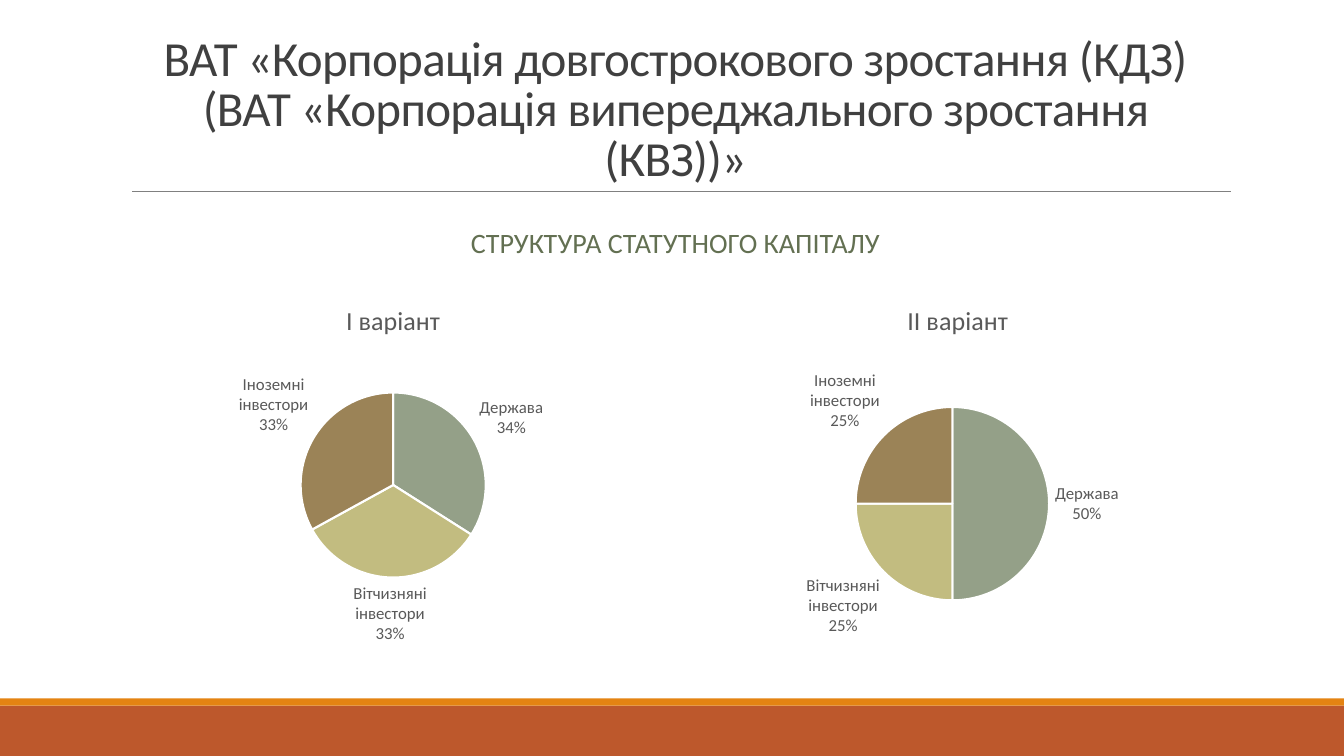
import pptx
import pptx.chart.data
import pptx.dml.color
import pptx.enum.chart
import pptx.enum.shapes
import pptx.enum.text
import pptx.oxml
import pptx.util
from dataclasses import dataclass
from lxml import etree
from pptx.util import Inches

TITLE = ("ВАТ «Корпорація довгострокового зростання (КДЗ)\v"
         "(ВАТ «Корпорація випереджального зростання (КВЗ))»")
SUBTITLE = "СТРУКТУРА СТАТУТНОГО КАПІТАЛУ"
INVESTORS = ["Держава", "Вітчизняні інвестори", "Іноземні інвестори"]
# name, shares in percent, pie place as fractions of the chart (x, y, w, h)
VARIANTS = [
    ("I варіант", (34, 33, 33), (0.33, 0.29, 0.34, 0.5)),
    ("II варіант", (50, 25, 25), (0.31, 0.33, 0.36, 0.52)),
]

MARGIN, CONTENT_WIDTH = 1.2, 11
CHART_TOP, CHART_WIDTH, CHART_HEIGHT = 2.82, 5.4, 3.69
CHART_GAP = CONTENT_WIDTH - 2 * CHART_WIDTH


@dataclass(frozen=True)
class Theme:
    font: str = "Calibri"
    title: str = "404040"
    subtitle: str = "637052"
    chart_text: str = "595959"
    rule: str = "808080"
    paper: str = "FFFFFF"
    bands: tuple = (("BD582C", 7, 0.5), ("E48312", 6.93, 0.07))
    slices: tuple = ("94A088", "C2BC80", "9B8357")
    title_size: float = 35
    subtitle_size: float = 20
    chart_title_size: float = 18.6
    label_size: float = 12


THEME = Theme()


def rgb(color):
    return pptx.dml.color.RGBColor.from_string(color)


def style_font(font, size, color):
    font.name = THEME.font
    font.size = pptx.util.Pt(size)
    font.bold = False
    font.color.rgb = rgb(color)


def write(frame, text, *, size, color, anchor, line_spacing=1.0,
          before=0, after=0, tracking=None):
    """Put one centred paragraph in a frame; tracking is in points."""
    frame.word_wrap = True
    frame.auto_size = pptx.enum.text.MSO_AUTO_SIZE.NONE
    frame.vertical_anchor = anchor
    frame.text = text
    paragraph = frame.paragraphs[0]
    paragraph.alignment = pptx.enum.text.PP_ALIGN.CENTER
    paragraph.line_spacing = line_spacing
    paragraph.space_before = pptx.util.Pt(before)
    paragraph.space_after = pptx.util.Pt(after)
    for run in paragraph.runs:
        style_font(run.font, size, color)
        if tracking is not None:
            run.font._element.set("spc", str(int(tracking * 100)))


def add_band(slide, width, color, top, height):
    band = slide.shapes.add_shape(pptx.enum.shapes.MSO_SHAPE.RECTANGLE,
                                  0, Inches(top), width, Inches(height))
    band.shadow.inherit = False
    band.fill.solid()
    band.fill.fore_color.rgb = rgb(color)
    band.line.fill.background()


def add_rule(slide):
    rule = slide.shapes.add_connector(pptx.enum.shapes.MSO_CONNECTOR.STRAIGHT,
                                      Inches(1.31), Inches(1.9), Inches(12.21), Inches(1.9))
    rule.line.color.rgb = rgb(THEME.rule)
    rule.line.width = pptx.util.Pt(0.5)
    etree.SubElement(rule._element.spPr, pptx.oxml.ns.qn("a:effectLst"))


def place_pie(chart, place):
    """Fix the inner plot area at the given fractions of the chart."""
    plot_area = chart._chartSpace.chart.plotArea
    for old in plot_area.findall(pptx.oxml.ns.qn("c:layout")):
        plot_area.remove(old)
    layout = etree.Element(pptx.oxml.ns.qn("c:layout"))
    manual = etree.SubElement(layout, pptx.oxml.ns.qn("c:manualLayout"))
    settings = [("layoutTarget", "inner"), ("xMode", "edge"), ("yMode", "edge")]
    for tag, value in settings + list(zip("xywh", place)):
        etree.SubElement(manual, pptx.oxml.ns.qn(f"c:{tag}")).set("val", str(value))
    plot_area.insert(0, layout)


def label_slices(plot):
    plot.has_data_labels = True
    labels = plot.data_labels
    style_font(labels.font, THEME.label_size, THEME.chart_text)
    labels.number_format = "0%"
    labels.number_format_is_linked = False
    labels.show_value = False
    labels.show_category_name = True
    labels.show_percentage = True
    labels.position = pptx.enum.chart.XL_LABEL_POSITION.OUTSIDE_END
    element = labels._element
    backing = pptx.oxml.parse_xml(
        f'<c:spPr {pptx.oxml.ns.nsdecls("c", "a")}><a:solidFill>'
        f'<a:srgbClr val="{THEME.paper}"/></a:solidFill></c:spPr>')
    element.find(pptx.oxml.ns.qn("c:txPr")).addprevious(backing)
    separator = etree.Element(pptx.oxml.ns.qn("c:separator"))
    separator.text = "\n"
    element.find(pptx.oxml.ns.qn("c:showBubbleSize")).addnext(separator)


def add_variant(slide, left, name, shares, place):
    data = pptx.chart.data.CategoryChartData()
    data.categories = INVESTORS
    data.add_series(name, shares)
    chart = slide.shapes.add_chart(
        pptx.enum.chart.XL_CHART_TYPE.PIE, Inches(left), Inches(CHART_TOP),
        Inches(CHART_WIDTH), Inches(CHART_HEIGHT), data).chart
    style_font(chart.font, 10, "000000")
    chart.has_legend = False
    chart.has_title = True
    chart.chart_title.include_in_layout = False
    heading = chart.chart_title.text_frame
    heading.text = name
    style_font(heading.paragraphs[0].runs[0].font, THEME.chart_title_size, THEME.chart_text)
    plot = chart.plots[0]
    plot.vary_by_categories = True
    for index, color in enumerate(THEME.slices):
        piece = plot.series[0].points[index].format
        piece.fill.solid()
        piece.fill.fore_color.rgb = rgb(color)
        piece.line.color.rgb = rgb(THEME.paper)
        piece.line.width = pptx.util.Pt(1.5)
    label_slices(plot)
    place_pie(chart, place)


def main():
    deck = pptx.Presentation()
    deck.slide_width, deck.slide_height = Inches(13.33), Inches(7.5)
    slide = deck.slides.add_slide(deck.slide_layouts[5])
    for band in THEME.bands:
        add_band(slide, deck.slide_width, *band)
    add_rule(slide)

    title = slide.shapes.title
    title.left, title.top = Inches(MARGIN), Inches(0.31)
    title.width, title.height = Inches(CONTENT_WIDTH), Inches(1.59)
    write(title.text_frame, TITLE, size=THEME.title_size, color=THEME.title,
          anchor=pptx.enum.text.MSO_ANCHOR.BOTTOM, line_spacing=0.85, tracking=-0.5)

    subtitle = slide.shapes.add_textbox(Inches(MARGIN), Inches(2.02),
                                        Inches(CONTENT_WIDTH), Inches(0.81))
    write(subtitle.text_frame, SUBTITLE, size=THEME.subtitle_size, color=THEME.subtitle,
          anchor=pptx.enum.text.MSO_ANCHOR.MIDDLE, line_spacing=0.9, before=12, after=2)

    for column, variant in enumerate(VARIANTS):
        add_variant(slide, MARGIN + column * (CHART_WIDTH + CHART_GAP), *variant)
    deck.save("out.pptx")


if __name__ == "__main__":
    main()
